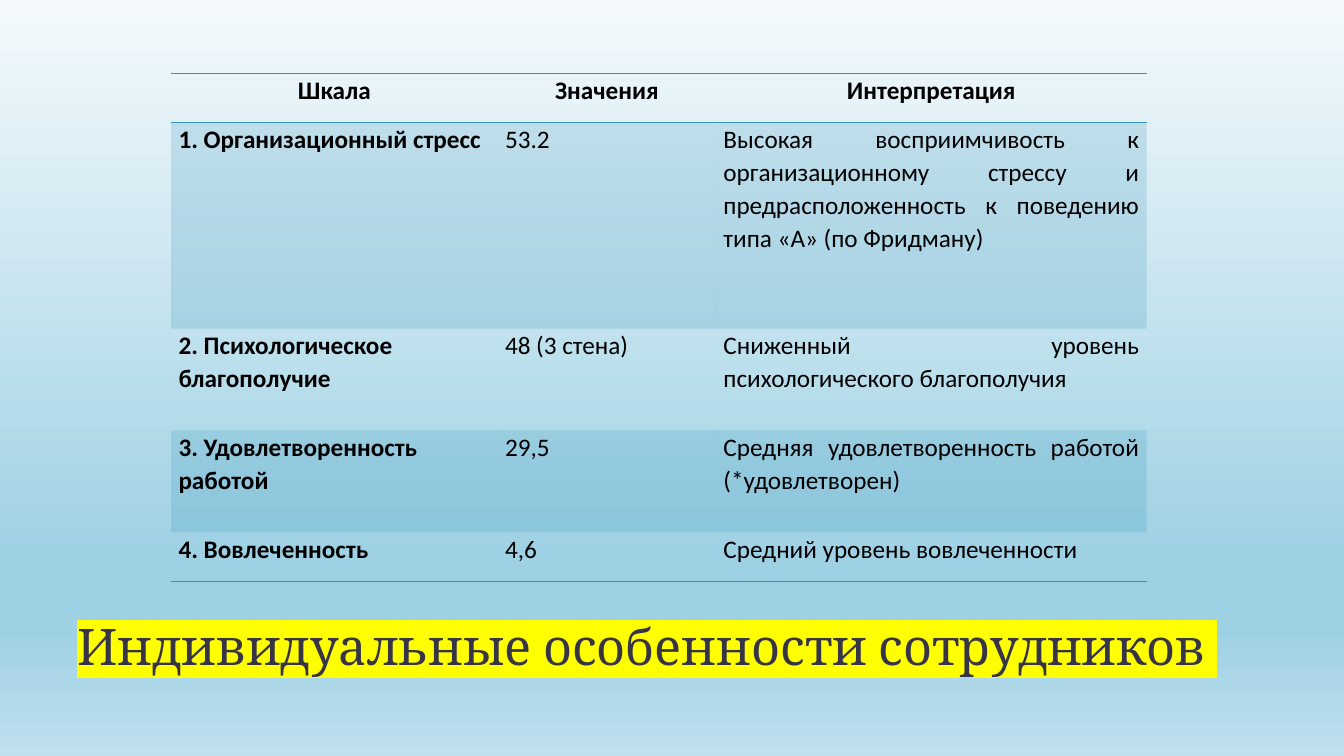
from lxml import etree
from pptx import Presentation
from pptx import util as u
from pptx.dml.color import RGBColor
from pptx.enum import text
from pptx.oxml import ns, parse_xml

PX = 9525
BLACK = RGBColor(0, 0, 0)
INK = RGBColor(0x37, 0x35, 0x45)
TEAL = RGBColor(0x34, 0x94, 0xBA)
YELLOW = RGBColor(0xFF, 0xFF, 0)
SKY = [(0, RGBColor(0xF4, 0xFA, 0xFC)), (74, RGBColor(0x9F, 0xD1, 0xE4)),
       (83, RGBColor(0x9F, 0xD1, 0xE4)), (100, RGBColor(0xBF, 0xE0, 0xED))]
PLAIN = "{2D5ABB26-0587-4C30-8999-92F81FD0307C}"
LEFT, MID, FULL = (text.PP_ALIGN.LEFT, text.PP_ALIGN.CENTER,
                   text.PP_ALIGN.JUSTIFY)
ROWS = [
    ("Шкала", "Значения", "Интерпретация"),
    ("1. Организационный стресс", "53.2",
     "Высокая восприимчивость к организационному стрессу и "
     "предрасположенность к поведению типа «А» (по Фридману)"),
    ("2. Психологическое благополучие", "48 (3 стена)",
     "Сниженный уровень психологического благополучия"),
    ("3. Удовлетворенность работой", "29,5",
     "Средняя удовлетворенность работой (*удовлетворен)"),
    ("4. Вовлеченность", "4,6", "Средний уровень вовлеченности"),
]


def px(n):
    return u.Emu(n * PX)


def put(item, **vals):
    for key, val in vals.items():
        setattr(item, key, val)


class Page:
    """Holds the slide and the shared style of its elements."""

    def __init__(self, deck):
        self.slide = deck.slides.add_slide(deck.slide_layouts[5])

    def label(self, para, words, color, font, form):
        put(para, **form)
        run = para.add_run()
        run.text = words
        put(run.font, **font)
        run.font.color.rgb = color
        return run

    def back(self, stops):
        fill = self.slide.background.fill
        fill.gradient()
        fill.gradient_angle = 270
        marks = self.slide.element.find(".//" + ns.qn("a:gsLst"))
        for mark in list(marks):
            marks.remove(mark)
        for pos, color in stops:
            mark = etree.SubElement(marks, ns.qn("a:gs"), pos=str(pos * 1000))
            etree.SubElement(mark, ns.qn("a:srgbClr"), val=str(color))

    def title(self, words, box):
        shape = self.slide.shapes.title
        put(shape, **dict(zip(("left", "top", "width", "height"), map(px, box))))
        frame = shape.text_frame
        put(frame, auto_size=text.MSO_AUTO_SIZE.NONE, word_wrap=True,
            vertical_anchor=text.MSO_ANCHOR.BOTTOM)
        run = self.label(frame.paragraphs[0], words, INK,
                         dict(name="Cambria", size=u.Pt(36)),
                         dict(alignment=LEFT, line_spacing=0.8))
        glow = parse_xml(f'<a:highlight {ns.nsdecls("a")}>'
                         f'<a:srgbClr val="{YELLOW}"/></a:highlight>')
        run._r.rPr.find(ns.qn("a:solidFill")).addnext(glow)

    def edge(self, cell, sides):
        props = cell._tc.get_or_add_tcPr()
        for spot, side in enumerate(sides):
            props.insert(spot, parse_xml(
                f'<a:ln{side} {ns.nsdecls("a")} w="12700"><a:solidFill>'
                f'<a:srgbClr val="{TEAL}"/></a:solidFill></a:ln{side}>'))

    def tint(self, cell):
        cell.fill.solid()
        cell.fill.fore_color.rgb = TEAL
        color = cell._tc.tcPr.find(".//" + ns.qn("a:srgbClr"))
        etree.SubElement(color, ns.qn("a:alpha"), val="20000")

    def table(self, rows, spot, wides, highs):
        size = sum(wides), sum(highs)
        grid = self.slide.shapes.add_table(
            len(rows), len(wides), *map(px, spot + size)).table
        grid._tbl.tblPr.find(ns.qn("a:tableStyleId")).text = PLAIN
        for col, wide in zip(grid.columns, wides):
            col.width = px(wide)
        for r, (row, high) in enumerate(zip(rows, highs)):
            grid.rows[r].height = px(high)
            for c, words in enumerate(row):
                cell = grid.cell(r, c)
                put(cell, margin_left=px(7), margin_right=px(7),
                    margin_top=0, margin_bottom=0)
                side = MID if r == 0 else FULL if c else LEFT
                self.label(cell.text_frame.paragraphs[0], words, BLACK,
                           dict(name="Calibri", size=u.Pt(18),
                                bold=r == 0 or c == 0),
                           dict(alignment=side, line_spacing=1.07,
                                space_after=u.Pt(8)))
                if r % 2:
                    self.tint(cell)
                else:
                    cell.fill.background()
                if r == 0:
                    self.edge(cell, "TB")
                elif r == len(rows) - 1:
                    self.edge(cell, "B")


def main():
    deck = Presentation()
    put(deck, slide_width=px(1280), slide_height=px(720))
    page = Page(deck)
    page.back(SKY)
    page.title("Индивидуальные особенности сотрудников ", (64, 536, 1152, 112))
    page.table(ROWS, (163, 70), (311, 208, 410), (47, 196, 97, 97, 47))
    deck.save("out.pptx")


if __name__ == "__main__":
    main()
